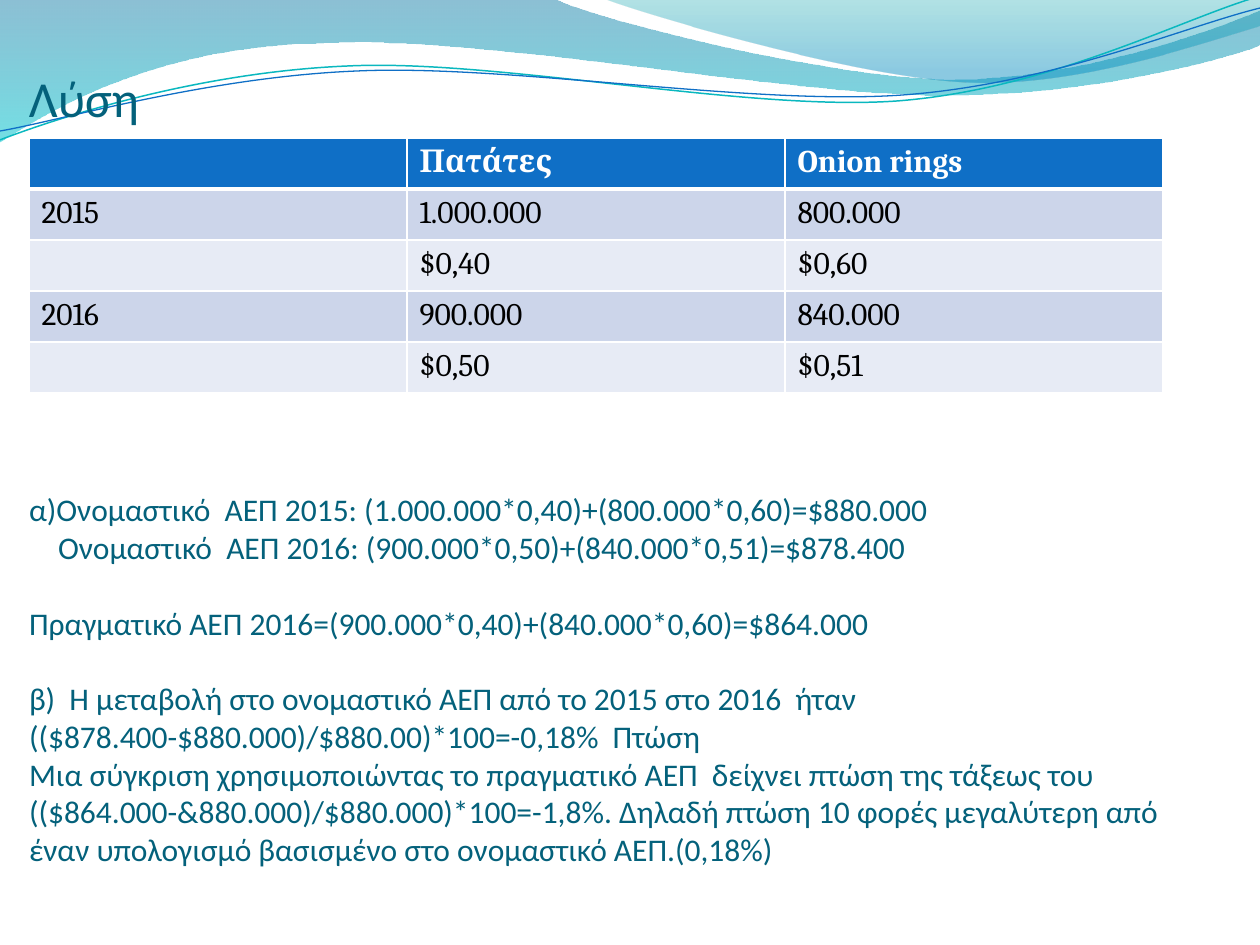
import math
import pptx
import pptx.util
import pptx.dml.color
import pptx.enum.text
import pptx.oxml.ns
from lxml import etree

SCALE = 914400 / 126
HUES = {
    "text": "04617B", "head": "0F6FC6", "odd": "CCD5EA", "even": "E7EBF5",
    "white": "FFFFFF", "black": "000000", "teal": "0AB8BF", "blue": "0F6FC6",
    "deep": "0074A1", "aqua": "00C6CF", "green": "00A1A9", "sky": "008BBF",
}
qn = pptx.oxml.ns.qn


def emu(px):
    return pptx.util.Emu(round(px * SCALE))


def rgb(name):
    return pptx.dml.color.RGBColor.from_string(HUES[name])


def write(para, text, size=18, font="Calibri", hue="text", bold=False,
          gap=0, indent=0):
    run = para.add_run()
    run.text = text
    run.font.size = pptx.util.Pt(size)
    run.font.name = font
    run.font.bold = bold
    run.font.color.rgb = rgb(hue)
    if gap:
        para.space_before = pptx.util.Pt(gap)
    if indent:
        para._p.get_or_add_pPr().set("marL", str(emu(indent)))


def turn(spot, mid, angle):
    """Rotate a point clockwise about mid."""
    x, y = spot[0] - mid[0], spot[1] - mid[1]
    sin, cos = math.sin(math.radians(angle)), math.cos(math.radians(angle))
    return mid[0] + x * cos - y * sin, mid[1] + x * sin + y * cos


def edge(cell, widths):
    """Set white cell borders; widths in points for left, right, top, bottom."""
    props = cell._tc.get_or_add_tcPr()
    for i, (side, width) in enumerate(zip("LRTB", widths)):
        line = etree.Element(qn("a:ln" + side), w=str(pptx.util.Pt(width)))
        fill = etree.SubElement(line, qn("a:solidFill"))
        etree.SubElement(fill, qn("a:srgbClr"), val=HUES["white"])
        props.insert(i, line)


class Deck:
    def __init__(self, wide, high):
        self.prs = pptx.Presentation()
        self.prs.slide_width, self.prs.slide_height = emu(wide), emu(high)
        self.slide = self.prs.slides.add_slide(self.prs.slide_layouts[6])

    def curve(self, start, parts, close=False, mid=(0, 0), angle=0):
        """Draw lines (2 numbers) and cubic curves (6 numbers) from start."""
        spots = [start] + [part[i:i + 2] for part in parts
                           for i in range(0, len(part), 2)]
        spots = [tuple(map(emu, turn(spot, mid, angle))) for spot in spots]
        pen = self.slide.shapes.build_freeform(*spots[0], scale=1.0)
        pen.add_line_segments(spots[1:], close=close)
        shape = pen.convert_to_shape()
        shape.shadow.inherit = False
        shape.rotation = -angle
        lines = iter(list(shape._element.iter(qn("a:lnTo"))))
        for part in parts:
            first = next(lines)
            if len(part) == 6:
                first.tag = qn("a:cubicBezTo")
                for line in (next(lines), next(lines)):
                    first.append(line[0])
                    line.getparent().remove(line)
        return shape

    def wave(self, start, parts, stops):
        """Draw a closed band; stops are (place, colour, opacity in percent)."""
        shape = self.curve(start, parts, close=True)
        shape.line.fill.background()
        shape.fill.gradient()
        shape.fill.gradient_angle = 270
        for stop, (place, hue, alpha) in zip(shape.fill.gradient_stops, stops):
            stop.position = place
            stop.color.rgb = rgb(hue)
            tone = stop._gs.find(qn("a:srgbClr"))
            etree.SubElement(tone, qn("a:alpha"), val=str(alpha * 1000))

    def stroke(self, start, parts, hue, width, mid):
        shape = self.curve(start, parts, mid=mid, angle=2.7)
        shape.fill.background()
        shape.line.color.rgb = rgb(hue)
        shape.line.width = pptx.util.Pt(width)

    def text(self, box, lines, foot=0):
        """Add bottom-anchored text; lines are (text, format) pairs."""
        frame = self.slide.shapes.add_textbox(*map(emu, box)).text_frame
        frame.word_wrap = True
        frame.vertical_anchor = pptx.enum.text.MSO_ANCHOR.BOTTOM
        frame.margin_left = frame.margin_right = 0
        frame.margin_top, frame.margin_bottom = emu(6), emu(foot)
        for i, (line, style) in enumerate(lines):
            para = frame.add_paragraph() if i else frame.paragraphs[0]
            write(para, line, **style)

    def table(self, box, rows):
        grid = self.slide.shapes.add_table(
            len(rows), len(rows[0]), *map(emu, box)).table
        for i, row in enumerate(rows):
            fill = "head" if i == 0 else "odd" if i % 2 else "even"
            for j, word in enumerate(row):
                cell = grid.cell(i, j)
                cell.fill.solid()
                cell.fill.fore_color.rgb = rgb(fill)
                edge(cell, (1, 1, 3 if i == 1 else 1, 1 if i else 3))
                para = cell.text_frame.paragraphs[0]
                if word:
                    write(para, word, font="Cambria", bold=i == 0,
                          hue="black" if i else "white")
                else:
                    para.font.size = pptx.util.Pt(18)


def main():
    deck = Deck(1260, 945)
    deck.wave((0, 0), [
        (554, -1), (600, 21, 837, 79, 955, 79), (1075, 79, 1207, 33, 1260, 11),
        (1261, 45), (1239, 55, 1096, 96, 940, 95), (783, 95, 481, 35, 324, 43),
        (163, 45, 58, 105, -1, 142), (0, 0),
    ], [(0, "deep", 45), (1, "aqua", 55)])
    deck.wave((604, -1), [
        (641, 14, 859, 78, 969, 82), (1079, 87, 1211, 40, 1260, 26),
        (1260, 0), (604, -1),
    ], [(0, "green", 30), (0.8, "sky", 45)])
    deck.stroke((0, 140), [
        (60, 117, 199, 72, 349, 66), (498, 59, 747, 112, 898, 101),
        (1050, 89, 1182, 19, 1257, -3),
    ], "teal", 0.85, (629, 72))
    deck.stroke((0, 131), [
        (59, 121, 207, 77, 357, 71), (508, 64, 752, 106, 903, 95),
        (1053, 84, 1186, 26, 1260, 8),
    ], "blue", 0.75, (629, 74))

    deck.text((29, 59, 1134, 69), [("Λύση", {"size": 28.8})])
    deck.table((29, 138, 1134, 255), [
        ("", "Πατάτες", "Onion rings"),
        ("2015", "1.000.000", "800.000"),
        ("", "$0,40", "$0,60"),
        ("2016", "900.000", "840.000"),
        ("", "$0,50", "$0,51"),
    ])
    deck.text((29, 423, 1191, 483), [
        ("α)Ονομαστικό  ΑΕΠ 2015: (1.000.000*0,40)+(800.000*0,60)=$880.000", {}),
        ("Ονομαστικό  ΑΕΠ 2016: (900.000*0,50)+(840.000*0,51)=$878.400",
         {"indent": 29}),
        ("Πραγματικό ΑΕΠ 2016=(900.000*0,40)+(840.000*0,60)=$864.000",
         {"gap": 21.5}),
        ("β)  Η μεταβολή στο ονομαστικό ΑΕΠ από το 2015 στο 2016  ήταν",
         {"gap": 21.5}),
        ("(($878.400-$880.000)/$880.00)*100=-0,18%  Πτώση", {}),
        ("Μια σύγκριση χρησιμοποιώντας το πραγματικό ΑΕΠ  δείχνει πτώση της "
         "τάξεως του (($864.000-&880.000)/$880.000)*100=-1,8%. Δηλαδή πτώση "
         "10 φορές μεγαλύτερη από έναν υπολογισμό βασισμένο στο ονομαστικό "
         "ΑΕΠ.(0,18%)", {}),
    ], foot=38)
    deck.prs.save("out.pptx")


if __name__ == "__main__":
    main()
